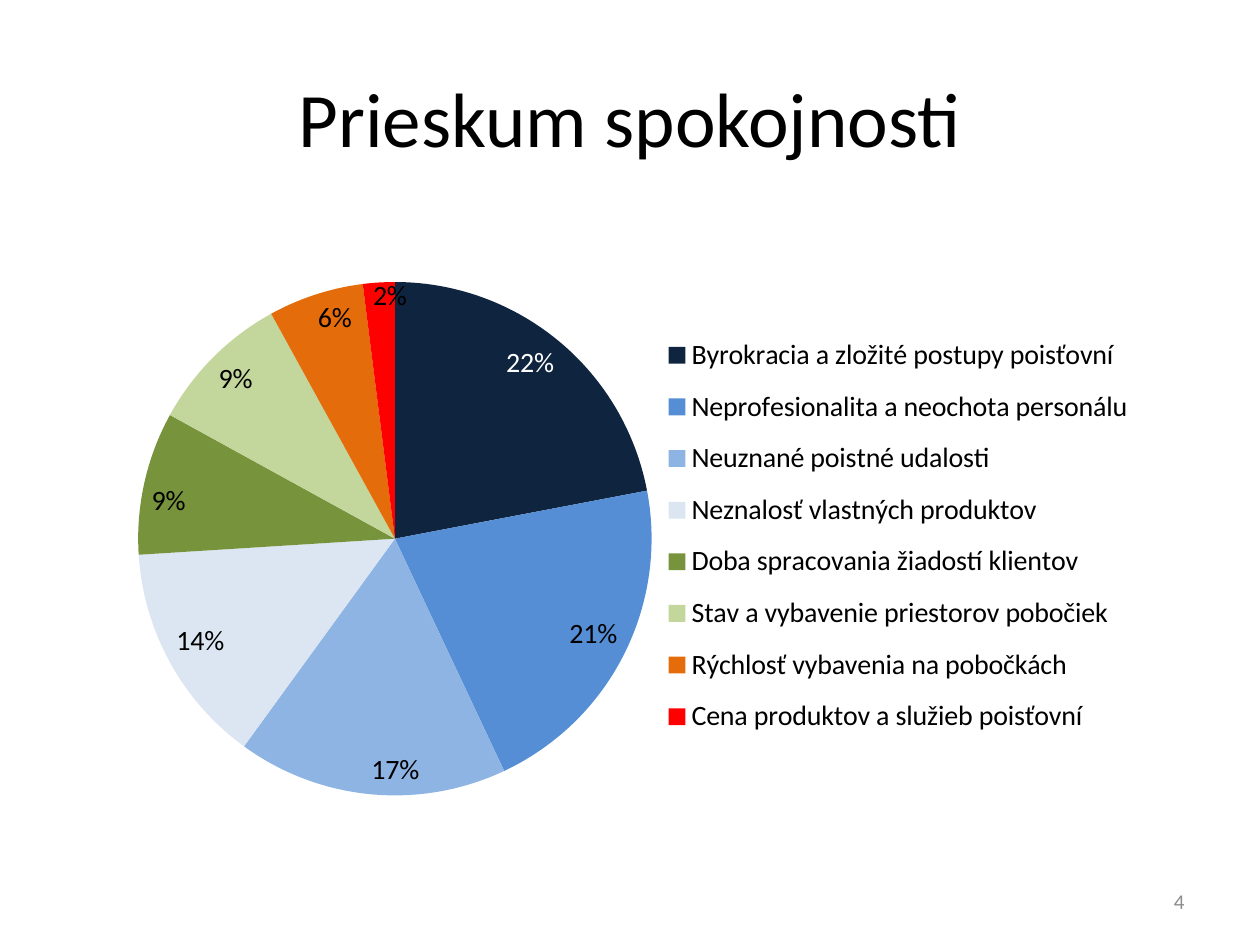
import dataclasses

import lxml.etree
import pptx
import pptx.chart.data
import pptx.dml.color
import pptx.enum.chart
import pptx.enum.text
import pptx.oxml.ns
import pptx.util

Cm = pptx.util.Cm
Pt = pptx.util.Pt
Align = pptx.enum.text.PP_ALIGN
Place = pptx.enum.chart.XL_LABEL_POSITION
qn = pptx.oxml.ns.qn

FONT = "Calibri"
HEX = {
    "black": "000000", "white": "FFFFFF", "grey": "8C8C8C",
    "navy": "0F243E", "blue": "558ED5", "sky": "8EB4E3", "ice": "DCE6F2",
    "green": "77933C", "lime": "C3D69B", "orange": "E46C0A", "red": "FF0000",
}


@dataclasses.dataclass
class Slice:
    name: str
    share: int
    fill: str
    tint: str = "black"


@dataclasses.dataclass
class Label:
    text: str
    box: tuple[float, float, float, float]
    size: int
    align: Align
    tint: str = "black"


SLICES = [
    Slice("Byrokracia a zložité postupy poisťovní", 22, "navy", "white"),
    Slice("Neprofesionalita a neochota personálu", 21, "blue"),
    Slice("Neuznané poistné udalosti", 17, "sky"),
    Slice("Neznalosť vlastných produktov", 14, "ice"),
    Slice("Doba spracovania žiadostí klientov", 9, "green"),
    Slice("Stav a vybavenie priestorov pobočiek", 9, "lime"),
    Slice("Rýchlosť vybavenia na pobočkách", 6, "orange"),
    Slice("Cena produktov a služieb poisťovní", 2, "red"),
]
LABELS = [
    Label("Prieskum spokojnosti", (1.27, 0.76, 22.86, 3.18), 44, Align.CENTER),
    Label("4", (18.21, 17.65, 5.92, 1.02), 12, Align.RIGHT, "grey"),
]


def color(name: str) -> pptx.dml.color.RGBColor:
    return pptx.dml.color.RGBColor.from_string(HEX[name])


def style(font, size: int, tint: str) -> None:
    font.name, font.size = FONT, Pt(size)
    font.color.rgb = color(tint)


def add_label(slide, label: Label) -> None:
    frame = slide.shapes.add_textbox(*map(Cm, label.box)).text_frame
    frame.word_wrap = True
    frame.vertical_anchor = pptx.enum.text.MSO_ANCHOR.MIDDLE
    frame.text = label.text
    line = frame.paragraphs[0]
    line.alignment = label.align
    style(line.runs[0].font, label.size, label.tint)


def set_layout(node, index: int, **values) -> None:
    """Place a chart part by hand, in fractions of the chart."""
    for old in node.findall(qn("c:layout")):
        node.remove(old)
    layout = lxml.etree.Element(qn("c:layout"))
    node.insert(index, layout)
    manual = lxml.etree.SubElement(layout, qn("c:manualLayout"))
    for key, value in values.items():
        lxml.etree.SubElement(manual, qn(f"c:{key}")).set("val", str(value))


def paint(plot) -> None:
    """Colour the slices and give each its percent label."""
    points = plot.series[0].points
    for index, part in enumerate(SLICES):
        point = points[index]
        point.format.fill.solid()
        point.format.fill.fore_color.rgb = color(part.fill)
        style(point.data_label.font, 16, part.tint)
        point.data_label.position = Place.INSIDE_END
    labels = plot.series[0].data_labels
    labels.number_format, labels.number_format_is_linked = "0%", False
    labels.show_value, labels.show_percentage = False, True
    labels.position = Place.INSIDE_END
    style(labels.font, 16, "black")


def add_pie(slide) -> None:
    data = pptx.chart.data.CategoryChartData()
    data.categories = [part.name for part in SLICES]
    data.add_series("Series 1", [part.share for part in SLICES])
    chart = slide.shapes.add_chart(
        pptx.enum.chart.XL_CHART_TYPE.PIE,
        Cm(1.7), Cm(5.13), Cm(21.59), Cm(11.13), data).chart
    chart.has_title = False
    style(chart.font, 16, "black")
    chart.plots[0].vary_by_categories = True
    paint(chart.plots[0])
    chart.has_legend = True
    chart.legend.position = pptx.enum.chart.XL_LEGEND_POSITION.RIGHT
    chart.legend.include_in_layout = False
    style(chart.legend.font, 16, "black")

    root = chart.element if hasattr(chart, "element") else chart._chartSpace
    for mark in root.iter(qn("c:dLbl")):
        mark.find(qn("c:showVal")).set("val", "0")
        mark.find(qn("c:showPercent")).set("val", "1")
    set_layout(mark, 1, x=0.01, y=-0.02)
    set_layout(next(root.iter(qn("c:plotArea"))), 0, layoutTarget="inner",
               xMode="edge", yMode="edge", x=0.04, y=0.05, w=0.5, h=0.93)
    set_layout(next(root.iter(qn("c:legend"))), 1, xMode="edge",
               yMode="edge", x=0.53, y=0.12, w=0.46, h=0.78)


if __name__ == "__main__":
    deck = pptx.Presentation()
    deck.slide_width, deck.slide_height = Cm(25.4), Cm(19.05)
    page = deck.slides.add_slide(deck.slide_layouts[6])
    add_pie(page)
    for item in LABELS:
        add_label(page, item)
    deck.save("out.pptx")
